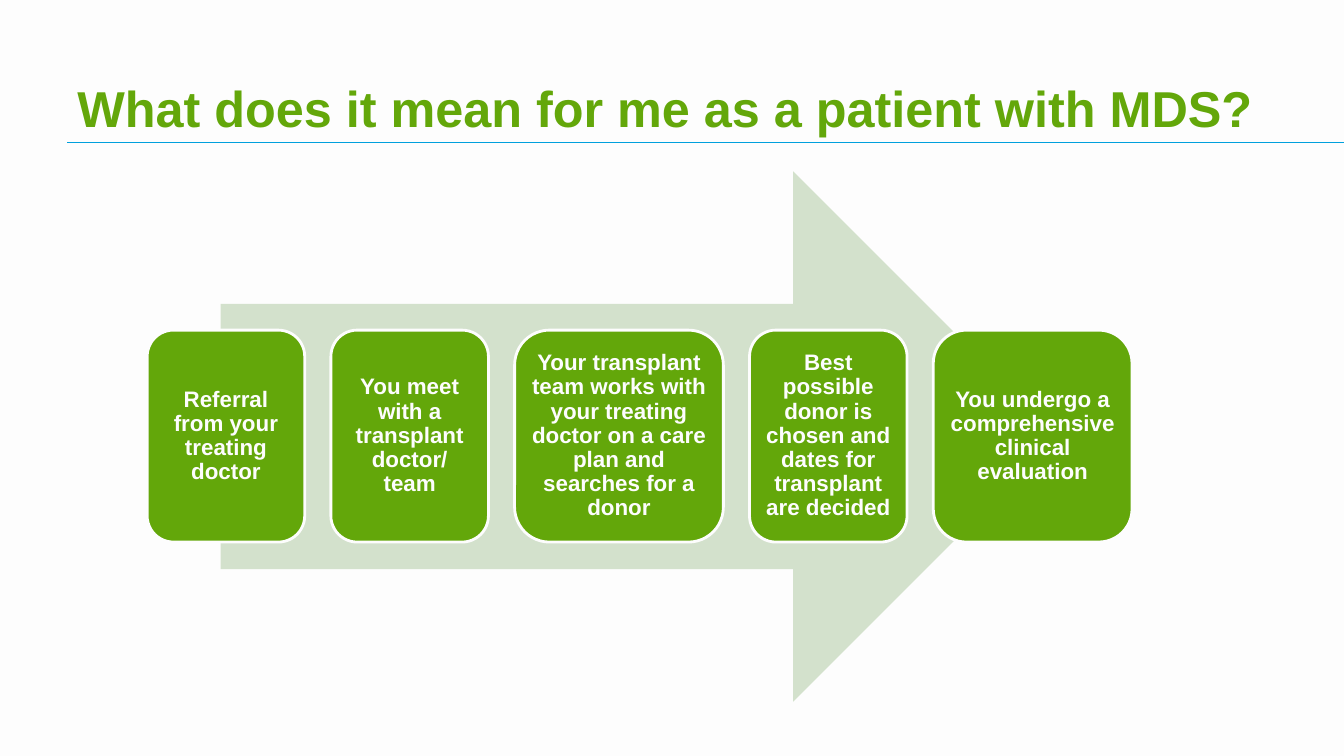
from lxml.etree import SubElement
from pptx import Presentation
from pptx.dml.color import RGBColor
from pptx.enum.shapes import MSO_CONNECTOR, MSO_SHAPE
from pptx.enum.text import MSO_ANCHOR, PP_ALIGN
from pptx.oxml.ns import qn
from pptx.util import Cm, Pt


def color(code):
    return RGBColor.from_string(code)


class PatientSlide:
    FONT = "Arial"
    GREEN = "63A70A"
    PALE_GREEN = "D3E1CC"
    BLUE = "00A0DD"
    WHITE = "FDFDFD"

    def __init__(self, presentation):
        self.slide = presentation.slides.add_slide(presentation.slide_layouts[6])
        background = self.slide.background.fill
        background.solid()
        background.fore_color.rgb = color(self.WHITE)

    def set_text(self, frame, text, size, ink):
        frame.word_wrap = True
        paragraph = frame.paragraphs[0]
        paragraph.text = text
        paragraph.font.name = self.FONT
        paragraph.font.size = Pt(size)
        paragraph.font.bold = True
        paragraph.font.color.rgb = color(ink)
        return paragraph

    def title(self, text, left, top, width, height):
        heading = self.slide.shapes.add_textbox(Cm(left), Cm(top), Cm(width), Cm(height))
        heading.text_frame.vertical_anchor = MSO_ANCHOR.BOTTOM
        self.set_text(heading.text_frame, text, 36, self.GREEN)

    def rule(self, left, right, y):
        underline = self.slide.shapes.add_connector(
            MSO_CONNECTOR.STRAIGHT, Cm(left), Cm(y), Cm(right), Cm(y))
        underline.line.color.rgb = color(self.BLUE)
        underline.line.width = Pt(0.75)
        SubElement(underline._element.spPr, qn("a:effectLst"))

    def block(self, kind, left, top, width, height, fill):
        shape = self.slide.shapes.add_shape(kind, Cm(left), Cm(top), Cm(width), Cm(height))
        shape.shadow.inherit = False
        shape.fill.solid()
        shape.fill.fore_color.rgb = color(fill)
        return shape

    def arrow(self, left, top, width, height):
        pathway = self.block(MSO_SHAPE.RIGHT_ARROW, left, top, width, height, self.PALE_GREEN)
        pathway.line.fill.background()

    def step(self, text, left, top, width, height):
        card = self.block(MSO_SHAPE.ROUNDED_RECTANGLE, left, top, width, height, self.GREEN)
        card.line.color.rgb = color(self.WHITE)
        card.line.width = Pt(2)
        frame = card.text_frame
        frame.margin_left = frame.margin_right = Cm(0.17)
        frame.margin_top = frame.margin_bottom = Cm(0.17)
        frame.vertical_anchor = MSO_ANCHOR.MIDDLE
        paragraph = self.set_text(frame, text, 16, self.WHITE)
        paragraph.alignment = PP_ALIGN.CENTER
        paragraph.line_spacing = 0.9


STEPS = [
    ("Referral from your treating doctor", 3.97),
    ("You meet with a transplant doctor/ team", 3.97),
    ("Your transplant team works with your treating doctor on a care plan "
     "and searches for a donor", 5.26),
    ("Best possible donor is chosen and dates for transplant are decided", 3.97),
    ("You undergo a comprehensive clinical evaluation", 5.01),
]
STEP_GAP = 0.66


def main():
    presentation = Presentation()
    presentation.slide_width = Cm(33.87)
    presentation.slide_height = Cm(19.05)

    page = PatientSlide(presentation)
    page.rule(1.7, 33.87, 3.6)
    page.title("What does it mean for me as a patient with MDS?", 1.7, 0.43, 30.48, 3.17)
    page.arrow(5.56, 4.32, 21.11, 13.36)

    left = 3.71
    for text, width in STEPS:
        page.step(text, left, 8.32, width, 5.34)
        left += width + STEP_GAP

    presentation.save("out.pptx")


if __name__ == "__main__":
    main()
